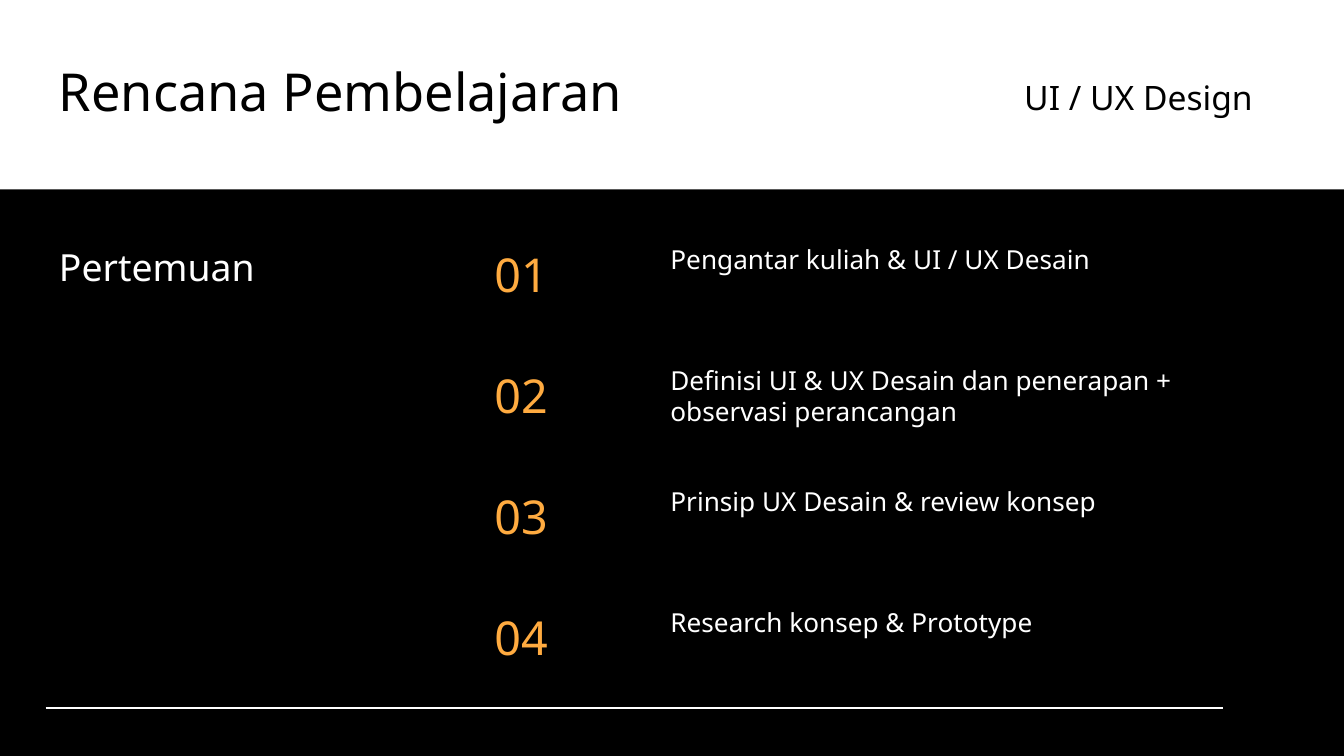
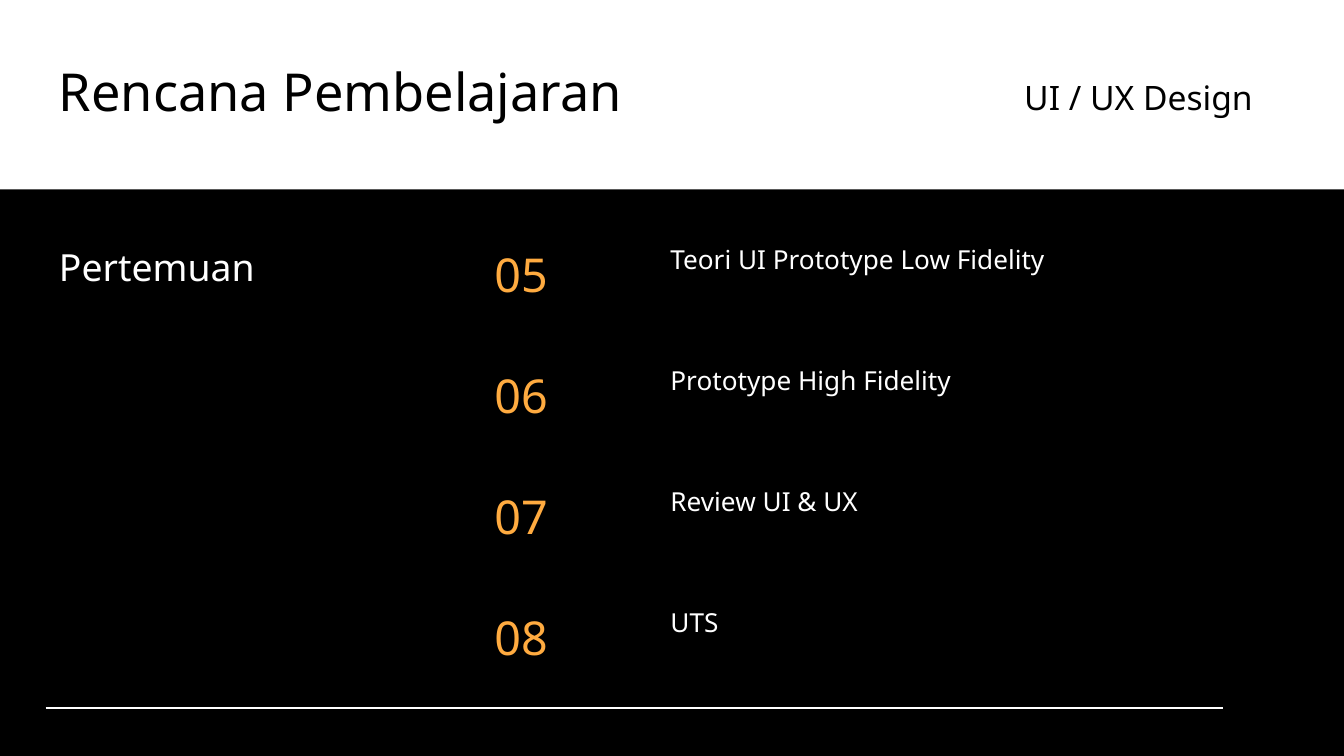
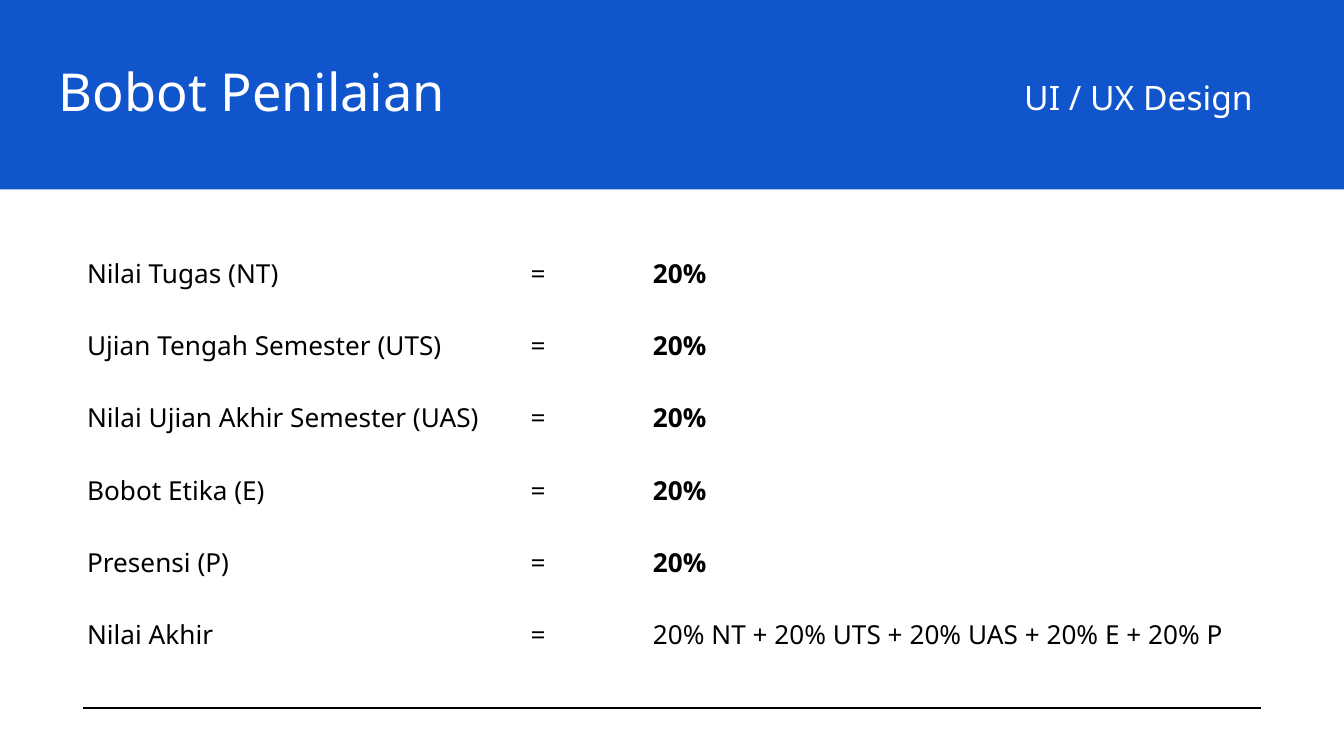
"""Build three course slides: two lesson plans and the grading weights."""
from lxml import etree
from pptx import Presentation
from pptx.dml.color import RGBColor
from pptx.enum.shapes import MSO_CONNECTOR, MSO_SHAPE
from pptx.enum.text import MSO_AUTO_SIZE, PP_ALIGN
from pptx.oxml.ns import qn
from pptx.util import Pt

STRAIGHT = MSO_CONNECTOR.STRAIGHT
RECTANGLE = MSO_SHAPE.RECTANGLE
FIT_SHAPE = MSO_AUTO_SIZE.SHAPE_TO_FIT_TEXT
NO_FIT = MSO_AUTO_SIZE.NONE
LEFT, RIGHT = PP_ALIGN.LEFT, PP_ALIGN.RIGHT

FONT = "Noto Sans"
COLORS = {"black": "000000", "white": "FFFFFF", "orange": "FFAB40", "blue": "1155CC"}
COLORS = {name: RGBColor.from_string(value) for name, value in COLORS.items()}

LESSON_TOP, LESSON_STEP = 120.2, 64.8
GRADE_TOP, GRADE_STEP = 128.2, 38.7

lesson_pages = [
    [
        "Pengantar kuliah & UI / UX Desain",
        "Definisi UI & UX Desain dan penerapan + observasi perancangan",
        "Prinsip UX Desain & review konsep",
        "Research konsep & Prototype",
    ],
    [
        "Teori UI Prototype Low Fidelity",
        "Prototype High Fidelity",
        "Review UI & UX",
        "UTS",
    ],
]
grades = [
    ("Nilai Tugas (NT)", "20%"),
    ("Ujian Tengah Semester (UTS)", "20%"),
    ("Nilai Ujian Akhir Semester (UAS)", "20%"),
    ("Bobot Etika (E)", "20%"),
    ("Presensi (P)", "20%"),
    ("Nilai Akhir", "20% NT + 20% UTS + 20% UAS + 20% E + 20% P"),
]

deck = Presentation()
deck.slide_width, deck.slide_height = Pt(720), Pt(405)


def add_text(page, text, left, top, width, height, size, color,
             bold=False, align=LEFT, spacing=1.15, after=12, fit=FIT_SHAPE):
    """Add a one-paragraph text box."""
    box = page.shapes.add_textbox(Pt(left), Pt(top), Pt(width), Pt(height))
    frame = box.text_frame
    frame.word_wrap = True
    frame.auto_size = fit
    frame.margin_left = frame.margin_right = Pt(7.2)
    frame.margin_top = frame.margin_bottom = Pt(7.2)
    para = frame.paragraphs[0]
    para.text = text
    para.alignment = align
    para.line_spacing = spacing
    para.space_after = Pt(after)
    para.font.name = FONT
    para.font.size = Pt(size)
    para.font.bold = bold
    para.font.color.rgb = COLORS[color]


def add_page(title, background, band_color, title_color, rule_color, rule_left):
    """Add a page with its title band and bottom rule."""
    page = deck.slides.add_slide(deck.slide_layouts[6])
    page.background.fill.solid()
    page.background.fill.fore_color.rgb = COLORS[background]
    band = page.shapes.add_shape(RECTANGLE, Pt(0), Pt(-0.7), Pt(720), Pt(102.2))
    band.shadow.inherit = False
    band.fill.solid()
    band.fill.fore_color.rgb = COLORS[band_color]
    band.line.fill.background()
    add_text(page, title, 24.5, 28.1, 671, 45.4, 28, title_color,
             spacing=0.9, after=0, fit=NO_FIT)
    add_text(page, "UI / UX Design", 360, 31, 318.2, 36, 18, title_color, align=RIGHT)
    rule = page.shapes.add_connector(
        STRAIGHT, Pt(rule_left), Pt(379.4), Pt(rule_left + 630.7), Pt(379.4))
    rule.line.color.rgb = COLORS[rule_color]
    rule.line.width = Pt(0.75)
    etree.SubElement(rule._element.spPr, qn("a:effectLst"))
    return page


number = 1
for topics in lesson_pages:
    page = add_page("Rencana Pembelajaran", "black", "white", "black", "white", 24.5)
    add_text(page, "Pertemuan", 24.5, LESSON_TOP, 154.8, 38.9, 20, "white")
    for row, topic in enumerate(topics):
        top = LESSON_TOP + row * LESSON_STEP
        width = 326.2 if row == 1 else 300.2
        height = 48.2 if len(topic) > 40 else 31.7
        add_text(page, f"{number:02}", 257.8, top, 84.2, 44.6, 25, "orange")
        add_text(page, topic, 352.1, top + 2.9, width, height, 14, "white",
                 spacing=1.0, after=0)
        number += 1

page = add_page("Bobot Penilaian", "white", "blue", "white", "black", 44.6)
for row, (label, weight) in enumerate(grades):
    top = GRADE_TOP + row * GRADE_STEP
    is_total = label == "Nilai Akhir"
    add_text(page, label, 39.6, top, 232.6, 31.7, 14, "black")
    add_text(page, "=", 277.2, top, 41, 31.7, 14, "black")
    add_text(page, weight, 342.7, top, 337.7 if is_total else 84.2, 31.7, 14, "black",
             bold=not is_total)

deck.save("out.pptx")
